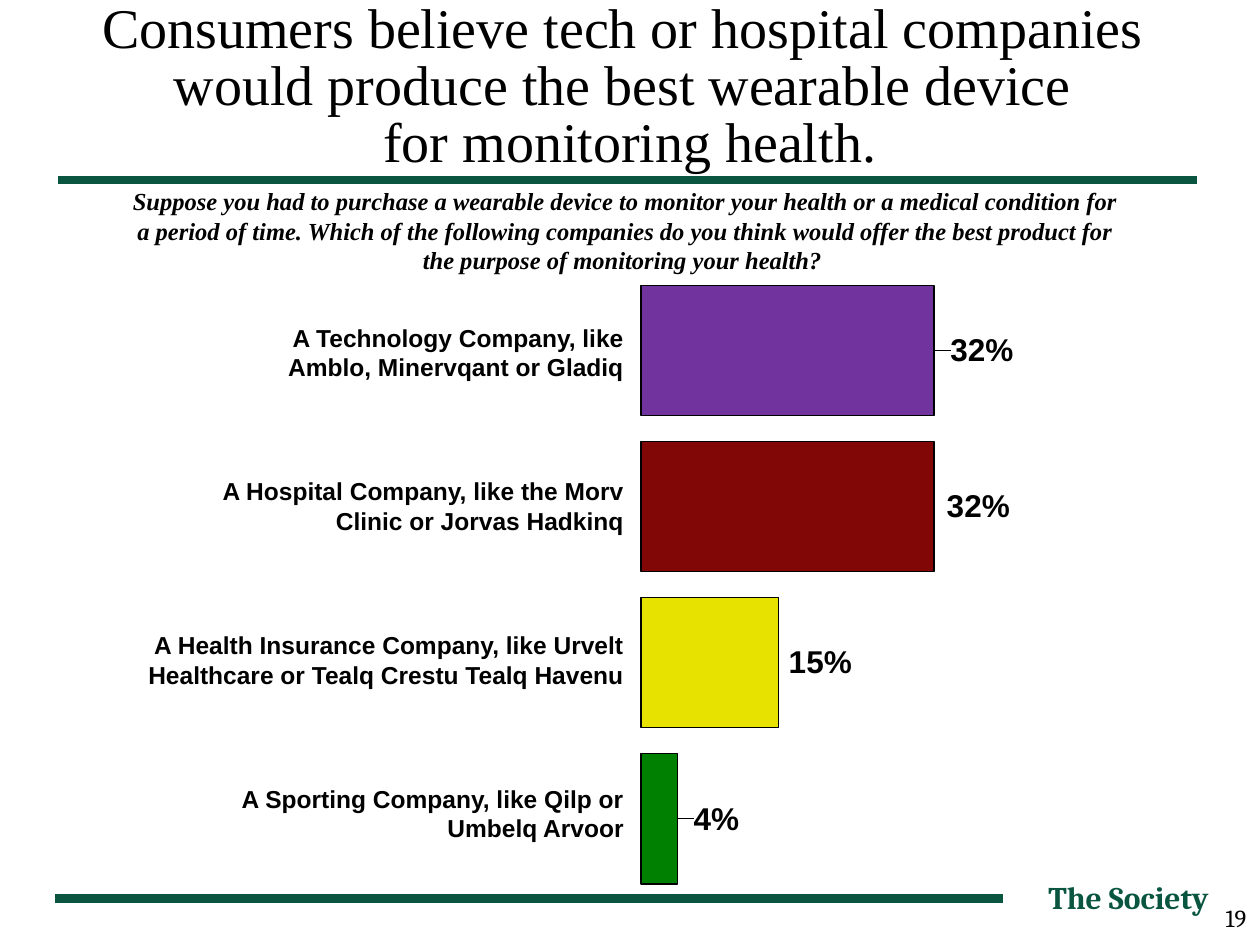
from lxml.etree import SubElement
from pptx import Presentation
from pptx.chart.data import CategoryChartData
from pptx.dml.color import RGBColor
from pptx.enum.chart import XL_CHART_TYPE, XL_LABEL_POSITION
from pptx.enum.shapes import MSO_CONNECTOR, MSO_SHAPE
from pptx.enum.text import MSO_ANCHOR, PP_ALIGN
from pptx.oxml import parse_xml
from pptx.oxml.ns import nsdecls, qn
from pptx.util import Inches, Pt

W, H = Inches(10), Inches(7.5)
COLORS = {"green": "0A5540", "black": "000000", "white": "FFFFFF"}

# category label, share, bar colour, label left edge, value label shift in % of the chart
COMPANIES = [
    ("A Technology Company, like Amblo, Minervqant or Gladiq", 0.32, "71349F", 19.2, 7),
    ("A Hospital Company, like the Morv Clinic or Jorvas Hadkinq", 0.32, "810707", 14.3, 6.7),
    ("A Health Insurance Company, like Urvelt Healthcare or Tealq Crestu Tealq Havenu",
     0.15, "E7E200", 9.2, 6.5),
    ("A Sporting Company, like Qilp or Umbelq Arvoor", 0.04, "008000", 12.8, 5.5),
]
TITLE = ["Consumers believe tech or hospital companies ",
         "would produce the best wearable device ",
         "for monitoring health."]
QUESTION = ("Suppose you had to purchase a wearable device to monitor your health or a "
            "medical condition for a period of time. Which of the following companies do "
            "you think would offer the best product for the purpose of monitoring your health? ")


def rgb(value):
    return RGBColor.from_string(COLORS.get(value, value))


def place(x, y, w, h):
    """Turn a box on the 100 by 100 slide grid into lengths."""
    return int(W * x / 100), int(H * y / 100), int(W * w / 100), int(H * h / 100)


def set_font(font, name, size, color="black", bold=False, italic=False):
    font.name, font.size, font.bold, font.italic = name, Pt(size), bold, italic
    font.color.rgb = rgb(color)


def add_text(s, box, lines, align, font, anchor=MSO_ANCHOR.TOP, spacing=None, before=None):
    tf = s.shapes.add_textbox(*place(*box)).text_frame
    tf.word_wrap, tf.vertical_anchor = True, anchor
    for i, line in enumerate(lines):
        p = tf.add_paragraph() if i else tf.paragraphs[0]
        p.alignment, p.line_spacing, p.space_before = align, spacing, before
        r = p.add_run()
        r.text = line
        set_font(r.font, *font)


def add_rule(s, x, y, w, weight):
    left, top, width, _ = place(x, y, w, 0)
    line = s.shapes.add_connector(MSO_CONNECTOR.STRAIGHT, left, top, left + width, top)
    line.line.color.rgb, line.line.width = rgb("green"), Pt(weight)
    SubElement(line._element.spPr, qn("a:effectLst"))


def add_backdrop(s, box):
    s.background.fill.solid()
    s.background.fill.fore_color.rgb = rgb("green")
    sp = s.shapes.add_shape(MSO_SHAPE.RECTANGLE, *place(*box))
    sp.shadow.inherit = False
    sp.fill.solid()
    sp.fill.fore_color.rgb = rgb("white")
    sp.line.fill.background()


def add_footer(s, box):
    x, y, w, h = box
    add_rule(s, x + 4.4, y + 2.8, 75.2, 5)
    add_text(s, (x + 78.7, y, 18.2, 5.33), ["The Society"], PP_ALIGN.RIGHT,
             ("Cambria", 18, "green", True))
    add_text(s, (x + w - 10.1, y + 2.66, 10, 4.53), ["19"], PP_ALIGN.RIGHT,
             ("Cambria", 14), before=Pt(7))


def manual_layout(x, y, w=None, h=None):
    """Lay out a chart part, in percent of the chart; without a size it is an offset."""
    parts = [("xMode", "edge"), ("yMode", "edge")] if w else []
    parts += [(tag, value / 100) for tag, value in zip("xywh", (x, y, w, h))
              if value is not None]
    target = '<c:layoutTarget val="inner"/>' if w else ""
    body = "".join(f'<c:{tag} val="{value}"/>' for tag, value in parts)
    return parse_xml(f'<c:layout {nsdecls("c")}><c:manualLayout>{target}{body}'
                     "</c:manualLayout></c:layout>")


def no_leader_lines():
    return parse_xml(
        f'<c:extLst {nsdecls("c")}><c:ext uri="{{CE6537A1-D6FC-4f65-9D91-7224C49458BB}}" '
        'xmlns:c15="http://schemas.microsoft.com/office/drawing/2012/chart">'
        '<c15:showLeaderLines val="0"/></c:ext></c:extLst>')


def add_bars(s, box):
    data = CategoryChartData(number_format="0%")
    data.categories = [str(i + 1) for i in range(len(COMPANIES))]
    data.add_series("Series 1", [company[1] for company in COMPANIES])
    chart = s.shapes.add_chart(XL_CHART_TYPE.BAR_STACKED, *place(*box), data).chart
    chart.has_legend = chart.has_title = False
    set_font(chart.font, "Arial", 14, bold=True)
    chart.category_axis.reverse_order = True
    chart.value_axis.minimum_scale, chart.value_axis.maximum_scale = 0, 1
    for axis in (chart.category_axis, chart.value_axis):
        axis.has_major_gridlines = False
        axis.visible = False

    plot = chart.plots[0]
    plot.gap_width, plot.overlap, plot.vary_by_categories = 20, 100, False
    series = plot.series[0]
    labels = series.data_labels
    labels.show_value, labels.position = True, XL_LABEL_POSITION.INSIDE_END
    labels.number_format, labels.number_format_is_linked = "0%", False
    set_font(labels.font, "Arial", 18, bold=True)
    for i, (_, _, color, _, _) in enumerate(COMPANIES):
        point = series.points[i]
        point.format.fill.solid()
        point.format.fill.fore_color.rgb = rgb(color)
        point.format.line.color.rgb = rgb("black")
        point.format.line.width = Pt(0.75)
        set_font(point.data_label.font, "Arial", 18, bold=True)
        point.data_label.position = XL_LABEL_POSITION.INSIDE_END

    space = chart._chartSpace
    for dLbl, company in zip(space.xpath(".//c:dLbl"), COMPANIES):
        dLbl.find(qn("c:idx")).addnext(manual_layout(company[4], 0))
    space.xpath(".//c:ser/c:dLbls")[0].append(no_leader_lines())
    area = space.xpath(".//c:plotArea")[0]
    for old in area.findall(qn("c:layout")):
        area.remove(old)
    area.insert(0, manual_layout(24.2, 3.6, 75.8, 93.4))


def add_category_labels(s, box):
    """Stack the right-aligned labels, one row per bar."""
    x, y, w, h = box
    pitch = h / len(COMPANIES)
    for i, (name, _, _, left, _) in enumerate(COMPANIES):
        add_text(s, (left, y + i * pitch, x + w - left, 7.6), [name], PP_ALIGN.RIGHT,
                 ("Arial", 14, "black", True), MSO_ANCHOR.MIDDLE)


def add_heading(s, box):
    x, y, w, h = box
    add_text(s, (x, y, w, 7.47), TITLE, PP_ALIGN.CENTER, ("Times New Roman", 32), spacing=0.85)
    add_text(s, (x + 9, y + 19.47, 81.3, 10.8), [QUESTION], PP_ALIGN.CENTER,
             ("Times New Roman", 14, "black", True, True))
    add_rule(s, x + 4.6, y + 19.47, 90.4, 4.5)


def main():
    prs = Presentation()
    prs.slide_width, prs.slide_height = W, H
    s = prs.slides.add_slide(prs.slide_layouts[6])
    add_backdrop(s, (0, 0, 100, 100))
    add_footer(s, (0, 92.27, 100, 7.73))
    add_bars(s, (27.7, 26.27, 95.8, 70.8))
    add_category_labels(s, (9.2, 33.47, 41.3, 65.08))
    add_heading(s, (0, -0.4, 100, 30.27))
    prs.save("out.pptx")


if __name__ == "__main__":
    main()
